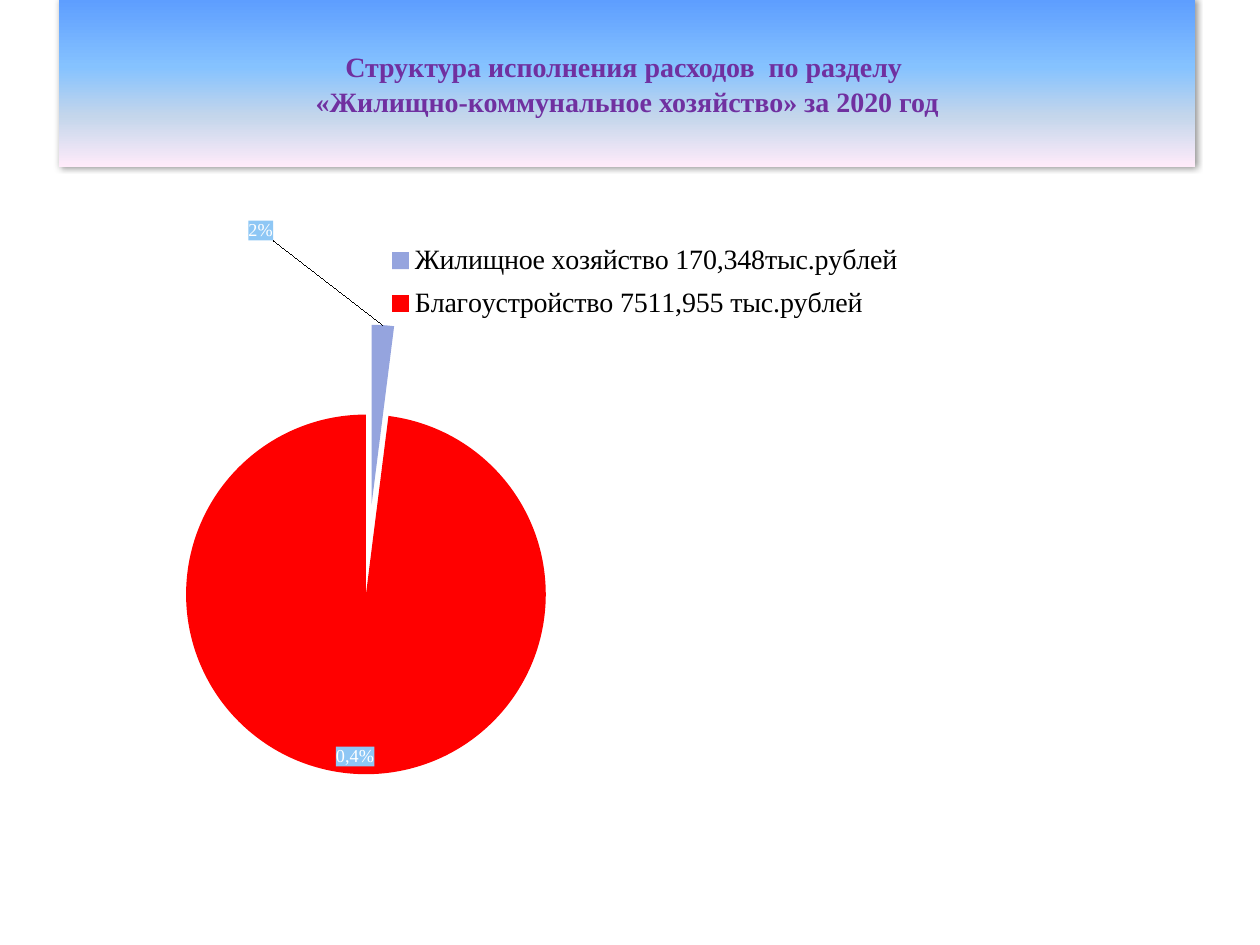
"""Build a slide with a banner title and an exploded pie of housing spending."""
from typing import NamedTuple

import pptx
import pptx.chart.data
import pptx.dml.color
import pptx.enum.chart
import pptx.enum.text
import pptx.oxml
import pptx.oxml.ns
import pptx.util
from pptx.util import Cm

SERIF = "Times New Roman"
NS = pptx.oxml.ns.nsdecls("a", "c")
PLACE = pptx.enum.chart.XL_LABEL_POSITION


class Slice(NamedTuple):
    name: str
    value: float
    color: str
    place: object
    shift: tuple
    note: str = ""


SLICES = [
    Slice("Жилищное хозяйство 170,348тыс.рублей", 2, "95A4DE",
          PLACE.OUTSIDE_END, (-0.12, -0.12)),
    Slice("Благоустройство 7511,955 тыс.рублей", 98, "FF0000",
          PLACE.INSIDE_END, (0, 0), "0,4%"),
]
LINES = ["Структура исполнения расходов  по разделу ",
         "«Жилищно-коммунальное хозяйство» за 2020 год"]
STOPS = [(0, "5E9EFF"), (40, "85C2FF"), (70, "C4D6EB"), (100, "FFEBFA")]


def rgb(code: str) -> pptx.dml.color.RGBColor:
    return pptx.dml.color.RGBColor.from_string(code)


def style(font, size: float, color: str, face: str = SERIF, bold: bool = False) -> None:
    font.name, font.size, font.bold = face, pptx.util.Pt(size), bold
    font.color.rgb = rgb(color)


def node(xml: str):
    return pptx.oxml.parse_xml(f"<c:wrap {NS}>{xml}</c:wrap>")[0]


def layout(x: float, y: float, w: float = 0, h: float = 0, frame: bool = False):
    parts = [("x", x), ("y", y)]
    head = ""
    if frame:
        parts += [("w", w), ("h", h)]
        head = '<c:xMode val="edge"/><c:yMode val="edge"/>'
    body = "".join(f'<c:{key} val="{val}"/>' for key, val in parts)
    return node(f"<c:layout><c:manualLayout>{head}{body}</c:manualLayout></c:layout>")


def back(label) -> None:
    fill = node('<c:spPr><a:solidFill><a:srgbClr val="8EC7F5"/></a:solidFill></c:spPr>')
    spot = label.xpath("./c:txPr | ./c:dLblPos | ./c:showLegendKey")[0]
    spot.addprevious(fill)


def banner(slide) -> None:
    title = slide.shapes.title
    title.left, title.top, title.width, title.height = Cm(1.19), Cm(0), Cm(22.91), Cm(3.36)
    stops = "".join(f'<a:gs pos="{pos * 1000}"><a:srgbClr val="{color}"/></a:gs>'
                    for pos, color in STOPS)
    props = title.element.spPr
    props.append(node('<a:prstGeom prst="rect"><a:avLst/></a:prstGeom>'))
    props.append(node(f'<a:gradFill><a:gsLst>{stops}</a:gsLst>'
                      '<a:lin ang="5400000" scaled="0"/></a:gradFill>'))
    props.append(node('<a:effectLst><a:outerShdw blurRad="50800" dist="0" dir="5400000">'
                      '<a:srgbClr val="000000"><a:alpha val="43000"/></a:srgbClr>'
                      '</a:outerShdw></a:effectLst>'))
    frame = title.text_frame
    frame.word_wrap = True
    frame.auto_size = pptx.enum.text.MSO_AUTO_SIZE.NONE
    frame.vertical_anchor = pptx.enum.text.MSO_ANCHOR.MIDDLE
    for rank, line in enumerate(LINES):
        para = frame.add_paragraph() if rank else frame.paragraphs[0]
        para.alignment = pptx.enum.text.PP_ALIGN.CENTER
        para.line_spacing = 1.05
        run = para.add_run()
        run.text = line
        style(run.font, 16, "7030A0", bold=True)


def paint(point, part: Slice) -> None:
    point.format.fill.solid()
    point.format.fill.fore_color.rgb = rgb(part.color)
    label = point.data_label
    if part.note:
        run = label.text_frame.paragraphs[0].add_run()
        run.text = part.note
        style(run.font, 10.4, "FFFFFF")
    else:
        style(label.font, 10.4, "FFFFFF")
    label.position = part.place


def pie(slide) -> None:
    data = pptx.chart.data.CategoryChartData()
    data.categories = [part.name for part in SLICES]
    data.add_series("Series 1", [part.value for part in SLICES])
    chart = slide.shapes.add_chart(pptx.enum.chart.XL_CHART_TYPE.PIE, Cm(2.49), Cm(4.32),
                                   Cm(20.6), Cm(13), data).chart
    chart.has_title = False
    style(chart.font, 11.7, "000000", "Cabin")
    chart.has_legend = True
    legend = chart.legend
    legend.position = pptx.enum.chart.XL_LEGEND_POSITION.RIGHT
    legend.include_in_layout = True
    style(legend.font, 16, "000000", SERIF)

    plot = chart.plots[0]
    plot.vary_by_categories = True
    series = plot.series[0]
    labels = series.data_labels
    labels.show_percentage, labels.show_value = True, False
    style(labels.font, 10.4, "FFFFFF")
    for rank, part in enumerate(SLICES):
        paint(series.points[rank], part)

    root = chart.element
    for item, part in zip(root.xpath("//c:dLbl"), SLICES):
        for old in item.xpath("./c:layout"):
            item.remove(old)
        item.xpath("./c:idx")[0].addnext(layout(*part.shift))
        item.xpath("./c:showVal")[0].set("val", "0")
        item.xpath("./c:showPercent")[0].set("val", "1")
        back(item)
    back(root.xpath("//c:ser/c:dLbls")[0])
    for spot in root.xpath("//c:ser/c:dPt/c:spPr"):
        spot.addprevious(node('<c:explosion val="25"/>'))
    root.xpath("//c:ser/c:dPt")[0].addprevious(node('<c:explosion val="25"/>'))

    area = root.xpath("//c:plotArea")[0]
    for old in area.xpath("./c:layout"):
        area.remove(old)
    inner = layout(0.02, 0.17, 0.44, 0.7, True)
    inner[0].insert(0, node('<c:layoutTarget val="inner"/>'))
    area.insert(0, inner)
    for old in root.xpath("//c:legend/c:layout"):
        old.getparent().remove(old)
    root.xpath("//c:legendPos")[0].addnext(layout(0.25, 0.03, 0.52, 0.15, True))


def main() -> None:
    deck = pptx.Presentation()
    deck.slide_width, deck.slide_height = Cm(25.4), Cm(19.05)
    slide = deck.slides.add_slide(deck.slide_layouts[5])
    pie(slide)
    banner(slide)
    deck.save("out.pptx")


if __name__ == "__main__":
    main()
